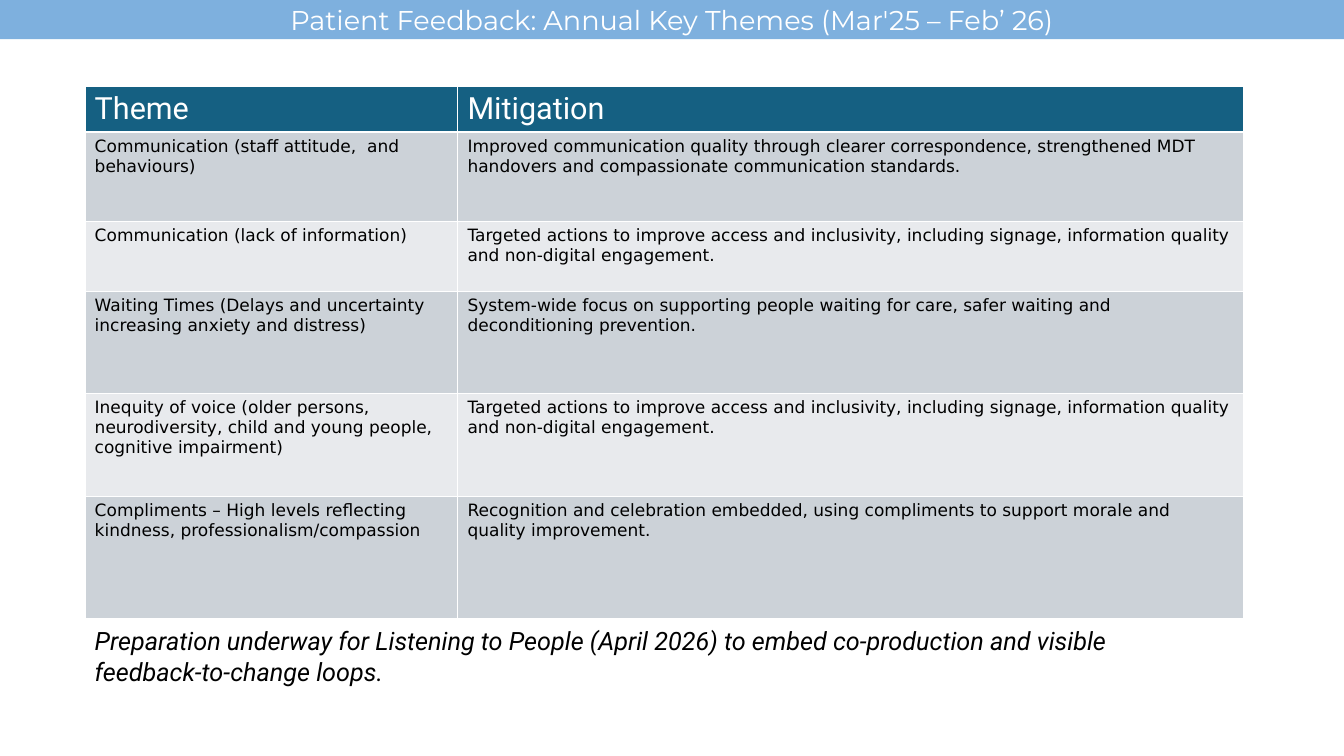
from lxml import etree
from pptx import Presentation, util as u
from pptx.dml.color import RGBColor
from pptx.enum import shapes, text
from pptx.oxml.ns import qn

TITLE = "Patient Feedback: Annual Key Themes (Mar'25 – Feb’ 26)"
ACCESS = ("Targeted actions to improve access and inclusivity, including signage, "
          "information quality and non‑digital engagement.")
ROWS = [
    ("Theme", "Mitigation"),
    ("Communication (staff attitude,  and behaviours)",
     "Improved communication quality through clearer correspondence, strengthened MDT "
     "handovers and compassionate communication standards."),
    ("Communication (lack of information)", ACCESS),
    ("Waiting Times (Delays and uncertainty increasing anxiety and distress)",
     "System‑wide focus on supporting people waiting for care, safer waiting and "
     "deconditioning prevention."),
    ("Inequity of voice (older persons, neurodiversity, child and young people, "
     "cognitive impairment)", ACCESS),
    ("Compliments – High levels reflecting kindness, professionalism/compassion",
     "Recognition and celebration embedded, using compliments to support morale and "
     "quality improvement."),
]
NEXT_STEP = ("Preparation underway for Listening to People (April 2026) to embed "
             "co‑production and visible feedback‑to‑change loops.")

COLORS = {"bar": "7EB0DE", "header": "156082", "odd": "CCD2D8", "even": "E8EAED",
          "white": "FFFFFF", "black": "000000"}
SLIDE_W, SLIDE_H, BAR_H = 2199, 1237, 64
LEFT, TABLE_TOP, NOTE_TOP, NOTE_W, NOTE_H = 139, 141, 1016, 1696, 166
COL_WIDTHS = [610, 1286]
ROW_HEIGHTS = [73, 146, 115, 167, 168, 200]
PAD_X, PAD_Y = 16, 8


def px(n):
    """Convert px to EMU, at 100 px to the inch."""
    return u.Emu(n * 9144)


def rgb(name):
    return RGBColor.from_string(COLORS[name])


def write(tf, words, font, size, color, italic=False):
    p = tf.paragraphs[0]
    p.text = words
    p.font.name, p.font.size, p.font.italic = font, u.Pt(size), italic
    p.font.color.rgb = rgb(color)
    return p


def pad(box):
    box.margin_left = box.margin_right = px(PAD_X)
    box.margin_top = box.margin_bottom = px(PAD_Y)


def add_borders(cell, bottom):
    tcPr = cell._tc.get_or_add_tcPr()
    for side, width in (("L", 1), ("R", 1), ("T", 1), ("B", bottom)):
        ln = etree.SubElement(tcPr, qn(f"a:ln{side}"), w=str(u.Pt(width)))
        fill = etree.SubElement(ln, qn("a:solidFill"))
        etree.SubElement(fill, qn("a:srgbClr"), val=COLORS["white"])


def add_themes_table(s):
    table = s.shapes.add_table(len(ROWS), len(COL_WIDTHS), px(LEFT), px(TABLE_TOP),
                               px(sum(COL_WIDTHS)), px(sum(ROW_HEIGHTS))).table
    for col, width in zip(table.columns, COL_WIDTHS):
        col.width = px(width)
    for i, (row, height, words) in enumerate(zip(table.rows, ROW_HEIGHTS, ROWS)):
        row.height = px(height)
        for cell, label in zip(row.cells, words):
            pad(cell)
            add_borders(cell, bottom=1 if i else 3)
            cell.fill.solid()
            if i == 0:
                cell.fill.fore_color.rgb = rgb("header")
                write(cell.text_frame, label, "Roboto", 36, "white")
            else:
                cell.fill.fore_color.rgb = rgb("odd" if i % 2 else "even")
                write(cell.text_frame, label, "DejaVu Sans", 20, "black")


def add_next_step(s):
    tf = s.shapes.add_textbox(px(LEFT), px(NOTE_TOP), px(NOTE_W), px(NOTE_H)).text_frame
    tf.word_wrap = True
    pad(tf)
    write(tf, NEXT_STEP, "Roboto", 29.7, "black", italic=True)


def add_title_bar(s):
    bar = s.shapes.add_shape(shapes.MSO_SHAPE.RECTANGLE, 0, 0, px(SLIDE_W), px(BAR_H))
    bar.shadow.inherit = False
    bar.fill.solid()
    bar.fill.fore_color.rgb = rgb("bar")
    bar.line.fill.background()
    tf = bar.text_frame
    tf.word_wrap = True
    tf.vertical_anchor = text.MSO_ANCHOR.MIDDLE
    p = write(tf, TITLE, "Montserrat", 32, "white")
    p.alignment = text.PP_ALIGN.CENTER


def main():
    prs = Presentation()
    prs.slide_width, prs.slide_height = px(SLIDE_W), px(SLIDE_H)
    s = prs.slides.add_slide(prs.slide_layouts[6])
    add_themes_table(s)
    add_next_step(s)
    add_title_bar(s)
    prs.save("out.pptx")


if __name__ == "__main__":
    main()
